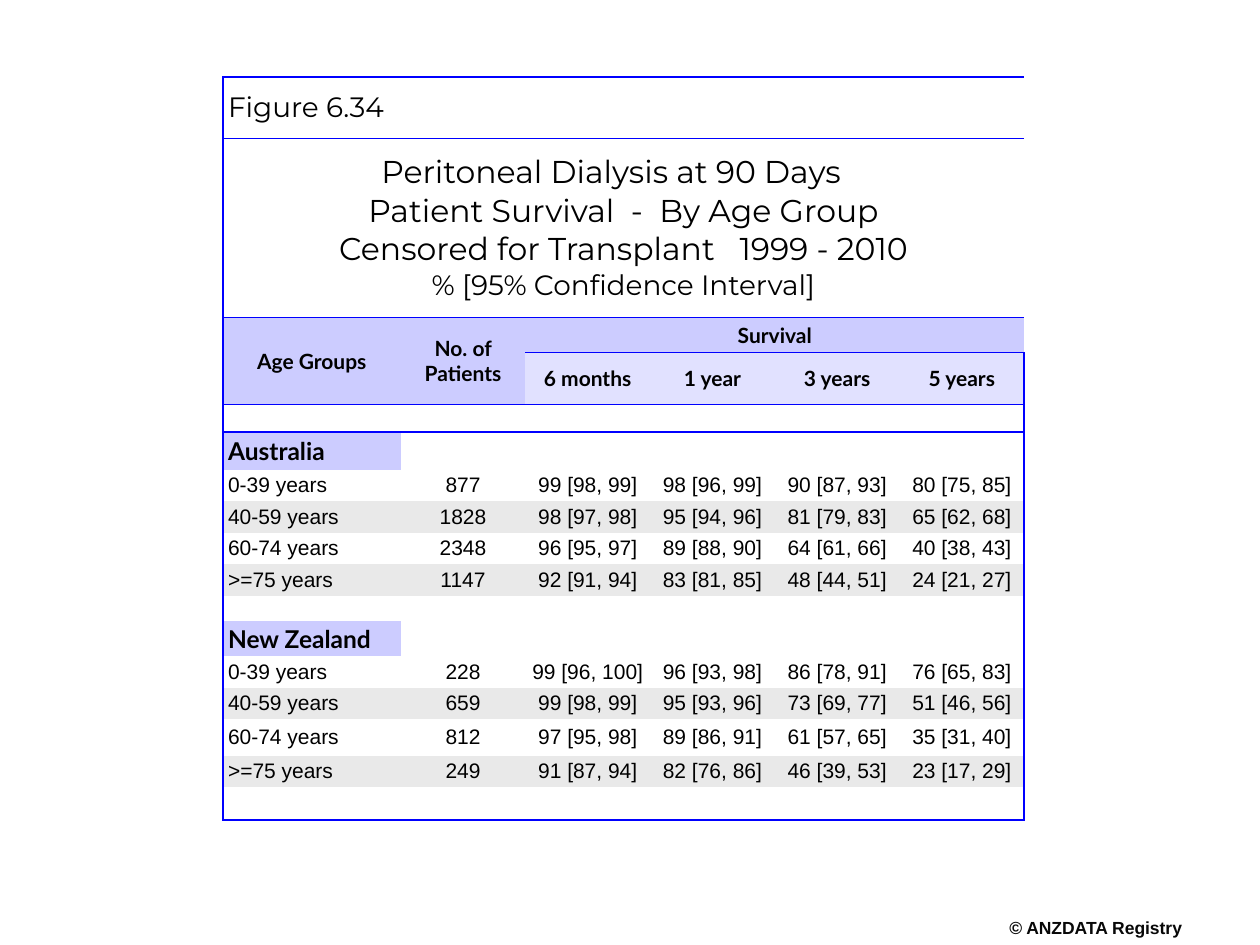
"""Build a slide with a table of peritoneal dialysis patient survival by age group."""
from dataclasses import dataclass

from lxml import etree
from pptx import Presentation
from pptx.dml.color import RGBColor
from pptx.enum import text
from pptx.oxml.ns import qn
from pptx.util import Inches, Pt


@dataclass(frozen=True)
class Theme:
    rule: str = "0000FF"
    header: str = "CCCCFF"
    subheader: str = "E1E1FF"
    stripe: str = "E9E9E9"
    ink: str = "000000"
    credit_ink: str = "080808"
    display: str = "Montserrat"
    heading: str = "Lato"
    body: str = "Arial"
    title_size: int = 18
    caption_size: int = 16
    country_size: int = 14
    body_size: int = 12
    credit_size: int = 10


theme = Theme()
LEFT, CENTER = text.PP_ALIGN.LEFT, text.PP_ALIGN.CENTER
NO_STYLE = "{2D5ABB26-0587-4C30-8999-92F81FD0307C}"


def write(para, words, font, size, align=LEFT, bold=False, color=theme.ink):
    para.alignment = align
    span = para.add_run()
    span.text = words
    span.font.name = font
    span.font.size = Pt(size)
    span.font.bold = bold
    span.font.color.rgb = RGBColor.from_string(color)


def add_border(cell, side):
    line = etree.SubElement(cell._tc.get_or_add_tcPr(), qn(f"a:ln{side}"), w=str(Pt(1)))
    fill = etree.SubElement(line, qn("a:solidFill"))
    etree.SubElement(fill, qn("a:srgbClr"), val=theme.rule)


title_lines = [
    ("Peritoneal Dialysis at 90 Days   ", theme.title_size),
    ("Patient Survival  -  By Age Group", theme.title_size),
    ("Censored for Transplant   1999 - 2010", theme.title_size),
    ("% [95% Confidence Interval]", theme.caption_size),
]
headers = {
    (2, 0): "Age Groups",
    (2, 1): "No. of Patients",
    (2, 2): "Survival",
    (3, 2): "6 months",
    (3, 3): "1 year",
    (3, 4): "3 years",
    (3, 5): "5 years",
}
countries = {5: "Australia", 11: "New Zealand"}
survival = {
    6: ["0-39 years", "877", "99 [98, 99]", "98 [96, 99]", "90 [87, 93]", "80 [75, 85]"],
    7: ["40-59 years", "1828", "98 [97, 98]", "95 [94, 96]", "81 [79, 83]", "65 [62, 68]"],
    8: ["60-74 years", "2348", "96 [95, 97]", "89 [88, 90]", "64 [61, 66]", "40 [38, 43]"],
    9: [">=75 years", "1147", "92 [91, 94]", "83 [81, 85]", "48 [44, 51]", "24 [21, 27]"],
    12: ["0-39 years", "228", "99 [96, 100]", "96 [93, 98]", "86 [78, 91]", "76 [65, 83]"],
    13: ["40-59 years", "659", "99 [98, 99]", "95 [93, 96]", "73 [69, 77]", "51 [46, 56]"],
    14: ["60-74 years", "812", "97 [95, 98]", "89 [86, 91]", "61 [57, 65]", "35 [31, 40]"],
    15: [">=75 years", "249", "91 [87, 94]", "82 [76, 86]", "46 [39, 53]", "23 [17, 29]"],
}
striped_rows = {7, 9, 13, 15}
ruled_rows = {0, 1, 3, 16}
column_widths = [1.41] + [0.99] * 5
row_heights = [0.49, 1.42, 0.28, 0.41, 0.22, 0.3, 0.25, 0.25, 0.25,
               0.25, 0.2, 0.28, 0.25, 0.25, 0.29, 0.25, 0.26]
last_column = len(column_widths) - 1

deck = Presentation()
deck.slide_width, deck.slide_height = Inches(10), Inches(7.5)
page = deck.slides.add_slide(deck.slide_layouts[6])

credit = page.shapes.add_textbox(Inches(7.99), Inches(7.28), Inches(1.41), Inches(0.17))
frame = credit.text_frame
frame.margin_left = frame.margin_right = frame.margin_top = frame.margin_bottom = 0
frame.word_wrap = False
write(frame.paragraphs[0], "© ANZDATA Registry", theme.body, theme.credit_size,
      CENTER, True, theme.credit_ink)

table = page.shapes.add_table(
    len(row_heights), len(column_widths), Inches(1.77), Inches(0.61),
    Inches(sum(column_widths)), Inches(sum(row_heights))).table
table.first_row = table.horz_banding = False
table._tbl.tblPr.find(qn("a:tableStyleId")).text = NO_STYLE
for column, width in zip(table.columns, column_widths):
    column.width = Inches(width)
for row, height in zip(table.rows, row_heights):
    row.height = Inches(height)

for start, end in [((0, 0), (0, 5)), ((1, 0), (1, 5)), ((2, 0), (3, 0)),
                   ((2, 1), (3, 1)), ((2, 2), (2, 5))]:
    table.cell(*start).merge(table.cell(*end))

for r in range(len(row_heights)):
    for c in range(len(column_widths)):
        cell = table.cell(r, c)
        cell.vertical_anchor = text.MSO_ANCHOR.MIDDLE
        cell.margin_left = cell.margin_right = Inches(0.04)
        cell.margin_top = cell.margin_bottom = Inches(0.04 if r < 2 else 0.02)

        if c == 0:
            add_border(cell, "L")
        if c == last_column:
            add_border(cell, "R")
        if r == 0 or r - 1 in ruled_rows or (r == 3 and c >= 2):
            add_border(cell, "T")
        if r in ruled_rows or (r == 2 and c >= 2):
            add_border(cell, "B")

        color = None
        if r == 2 or (r == 3 and c < 2) or (r in countries and c == 0):
            color = theme.header
        elif r == 3:
            color = theme.subheader
        elif r in striped_rows:
            color = theme.stripe
        if color:
            cell.fill.solid()
            cell.fill.fore_color.rgb = RGBColor.from_string(color)
        else:
            cell.fill.background()

        para = cell.text_frame.paragraphs[0]
        if (r, c) == (0, 0):
            write(para, "Figure 6.34", theme.display, theme.caption_size)
        elif (r, c) == (1, 0):
            for number, (words, size) in enumerate(title_lines):
                line = cell.text_frame.add_paragraph() if number else para
                write(line, words, theme.display, size, CENTER)
        elif (r, c) in headers:
            write(para, headers[r, c], theme.heading, theme.body_size, CENTER, True)
        elif r in countries and c == 0:
            write(para, countries[r], theme.heading, theme.country_size, bold=True)
        elif r in survival:
            write(para, survival[r][c], theme.body, theme.body_size, CENTER if c else LEFT)
        else:
            etree.SubElement(para._p, qn("a:endParaRPr"), sz="800")

deck.save("out.pptx")
